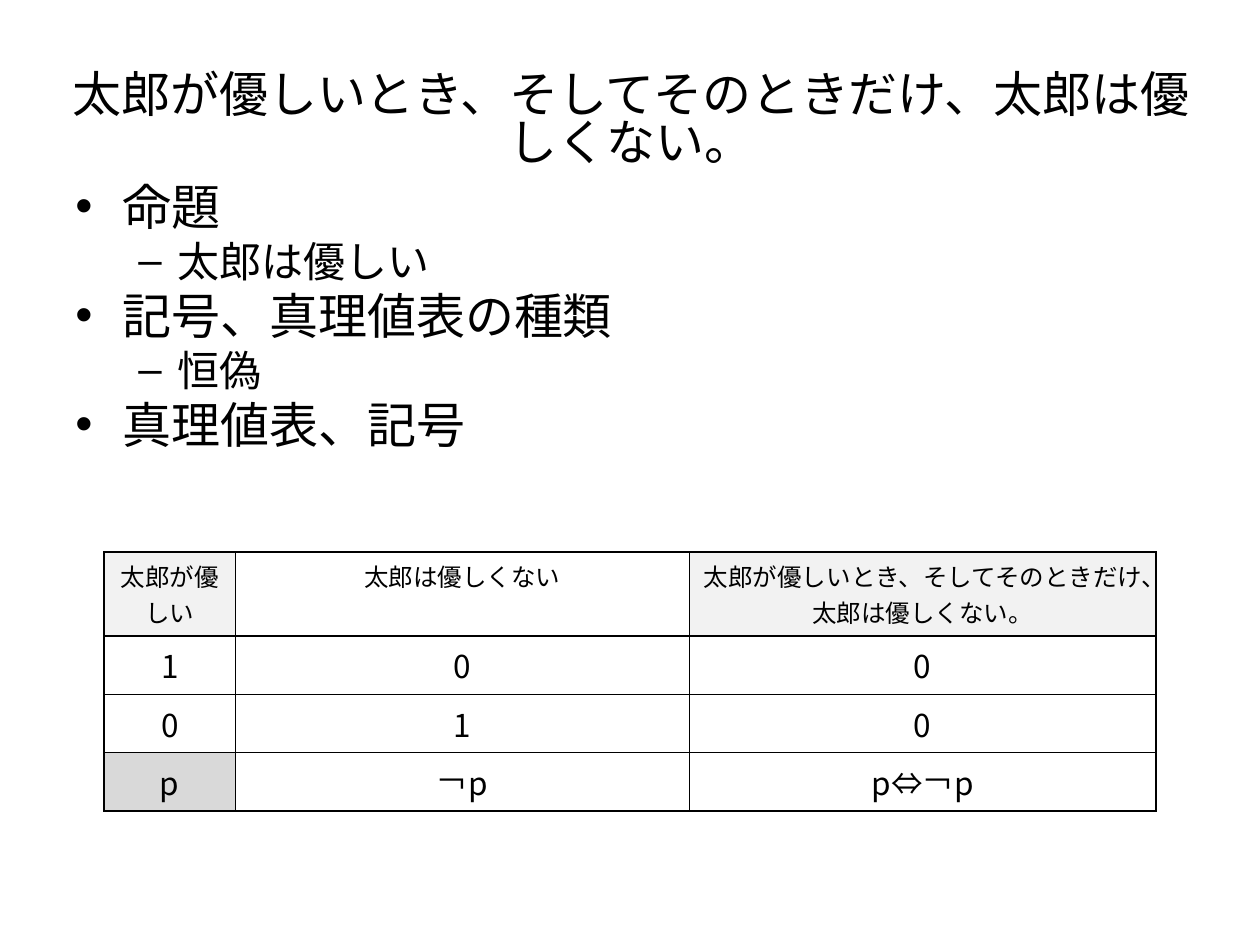
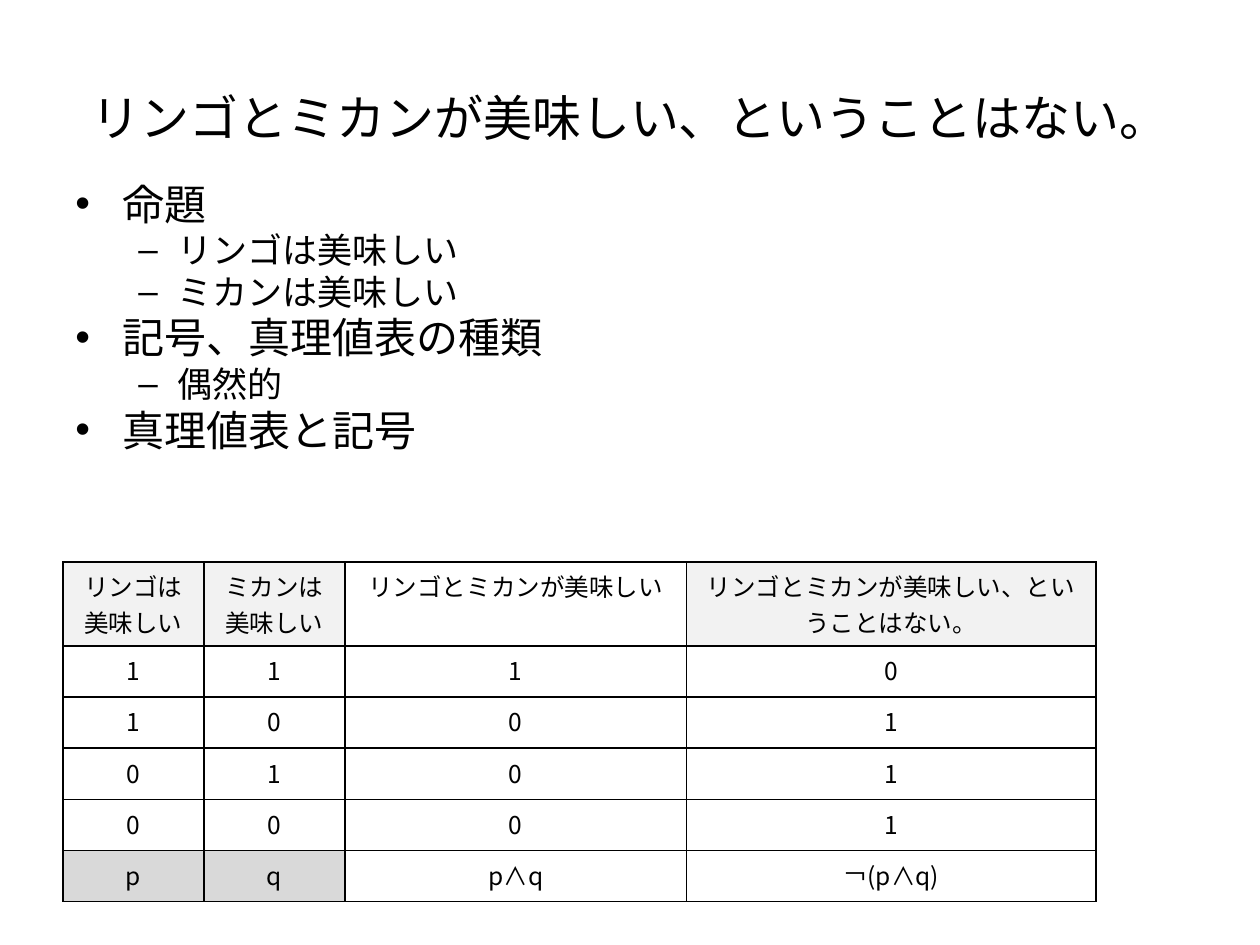
from dataclasses import dataclass

from lxml import etree
from pptx import Presentation
from pptx.dml.color import RGBColor
from pptx.enum import lang, text
from pptx.oxml import ns
from pptx.util import Pt


@dataclass(frozen=True)
class Theme:
    """Colours, type and spacing shared by the slides."""
    face: str = "Noto Sans CJK JP"
    ink: str = "000000"
    pale: str = "F2F2F2"
    grey: str = "D9D9D9"
    title: int = 28
    head: int = 14
    lead: float = 0.83
    row: float = 29.2
    top: float = 48


LOOK = Theme()
LEVELS = (
    {"marL": 27, "indent": -27, "char": "•"},
    {"marL": 58.5, "indent": -22.5, "char": "–"},
)


def put(obj, **vals):
    """Set each named attribute of an object."""
    for key, val in vals.items():
        setattr(obj, key, val)


def place(shape, left, top, width, height):
    """Move and size a shape in points."""
    put(shape, left=Pt(left), top=Pt(top), width=Pt(width), height=Pt(height))


def sub(node, tag, **attrs):
    """Append a drawing element with attributes."""
    return etree.SubElement(node, ns.qn(tag), attrs)


def write(para, words, size, **vals):
    """Fill a paragraph with one styled run."""
    put(para, **vals)
    run = para.add_run()
    run.text = words
    put(run.font, name=LOOK.face, size=Pt(size), bold=False,
        language_id=lang.MSO_LANGUAGE_ID.JAPANESE)
    run.font.color.rgb = RGBColor.from_string(LOOK.ink)
    sub(run.font._element, "a:ea", typeface=LOOK.face)


def head(slide, words, left, width):
    """Write the centred slide title."""
    shape = slide.shapes.title
    place(shape, left, 21.6, width, 90)
    frame = shape.text_frame
    put(frame, word_wrap=True, auto_size=text.MSO_AUTO_SIZE.NONE,
        vertical_anchor=text.MSO_ANCHOR.MIDDLE, margin_top=Pt(9.6))
    write(frame.paragraphs[0], words, LOOK.title,
          alignment=text.PP_ALIGN.CENTER, line_spacing=LOOK.lead)


def points(slide, items, sizes):
    """Write a two-level bulleted outline."""
    box = slide.shapes.add_textbox(0, 0, 0, 0)
    place(box, 36, 100, 648, 356.4)
    frame = box.text_frame
    put(frame, word_wrap=True, auto_size=text.MSO_AUTO_SIZE.NONE,
        margin_top=Pt(6.6))
    for num, (level, words) in enumerate(items):
        para = frame.add_paragraph() if num else frame.paragraphs[0]
        size = sizes[level]
        write(para, words, size, level=level, line_spacing=LOOK.lead,
              space_before=Pt(size * 0.2 if num else 0))
        props, rule = para._p.get_or_add_pPr(), LEVELS[level]
        for key in ("marL", "indent"):
            props.set(key, str(Pt(rule[key])))
        sub(props, "a:buFont", typeface="Arial")
        sub(props, "a:buChar", char=rule["char"])


def edge(cell):
    """Draw the four borders of a cell."""
    props = cell._tc.get_or_add_tcPr()
    for num, side in enumerate("LRTB"):
        line = sub(props, f"a:ln{side}", w=str(Pt(1)))
        sub(sub(line, "a:solidFill"), "a:srgbClr", val=LOOK.ink)
        props.insert(num, line)


def shade(row, col, rows, cols):
    """Choose the fill of a truth table cell."""
    if row == 0 and col != cols - 2:
        return LOOK.pale
    if row == rows - 1 and col < cols - 2:
        return LOOK.grey
    return None


def truth(slide, data, left, top, widths, size):
    """Build a truth table with names on top and symbols below."""
    rows, cols = len(data), len(widths)
    frame = slide.shapes.add_table(
        rows, cols, Pt(left), Pt(top), Pt(sum(widths)),
        Pt(LOOK.top + LOOK.row * (rows - 1)))
    table = frame.table
    put(table, first_row=False, horz_banding=False)
    for col, width in zip(table.columns, widths):
        col.width = Pt(width)
    for r, line in enumerate(data):
        table.rows[r].height = Pt(LOOK.row if r else LOOK.top)
        for c, words in enumerate(line):
            cell = table.cell(r, c)
            write(cell.text_frame.paragraphs[0], words,
                  size if r else LOOK.head, alignment=text.PP_ALIGN.CENTER)
            tint = shade(r, c, rows, cols)
            if tint:
                cell.fill.solid()
                cell.fill.fore_color.rgb = RGBColor.from_string(tint)
            else:
                cell.fill.background()
            edge(cell)


def main():
    """Build and save both slides."""
    deck = Presentation()
    put(deck, slide_width=Pt(720), slide_height=Pt(540))
    plain = deck.slide_layouts[5]

    claim = "太郎が優しいとき、そしてそのときだけ、太郎は優しくない。"
    slide = deck.slides.add_slide(plain)
    head(slide, claim, 20.2, 680.4)
    points(slide, [(0, "命題"), (1, "太郎は優しい"),
                   (0, "記号、真理値表の種類"), (1, "恒偽"),
                   (0, "真理値表、記号")], (28, 24))
    truth(slide, [("太郎が優しい", "太郎は優しくない", claim),
                  *("100", "010"),
                  ("p", "￢p", "p⇔￢p")],
          59.5, 315.4, (75, 259.4, 266.8), 18)

    claim = "リンゴとミカンが美味しい、ということはない。"
    slide = deck.slides.add_slide(plain)
    head(slide, claim, 36, 648)
    points(slide, [(0, "命題"), (1, "リンゴは美味しい"),
                   (1, "ミカンは美味しい"),
                   (0, "記号、真理値表の種類"), (1, "偶然的"),
                   (0, "真理値表と記号")], (24, 20))
    truth(slide, [("リンゴは美味しい", "ミカンは美味しい",
                   "リンゴとミカンが美味しい", claim),
                  *("1110", "1001", "0101", "0001"),
                  ("p", "q", "p∧q", "￢(p∧q)")],
          36, 321.1, (80.6, 80.6, 195.1, 234), 14)

    deck.save("out.pptx")


if __name__ == "__main__":
    main()
